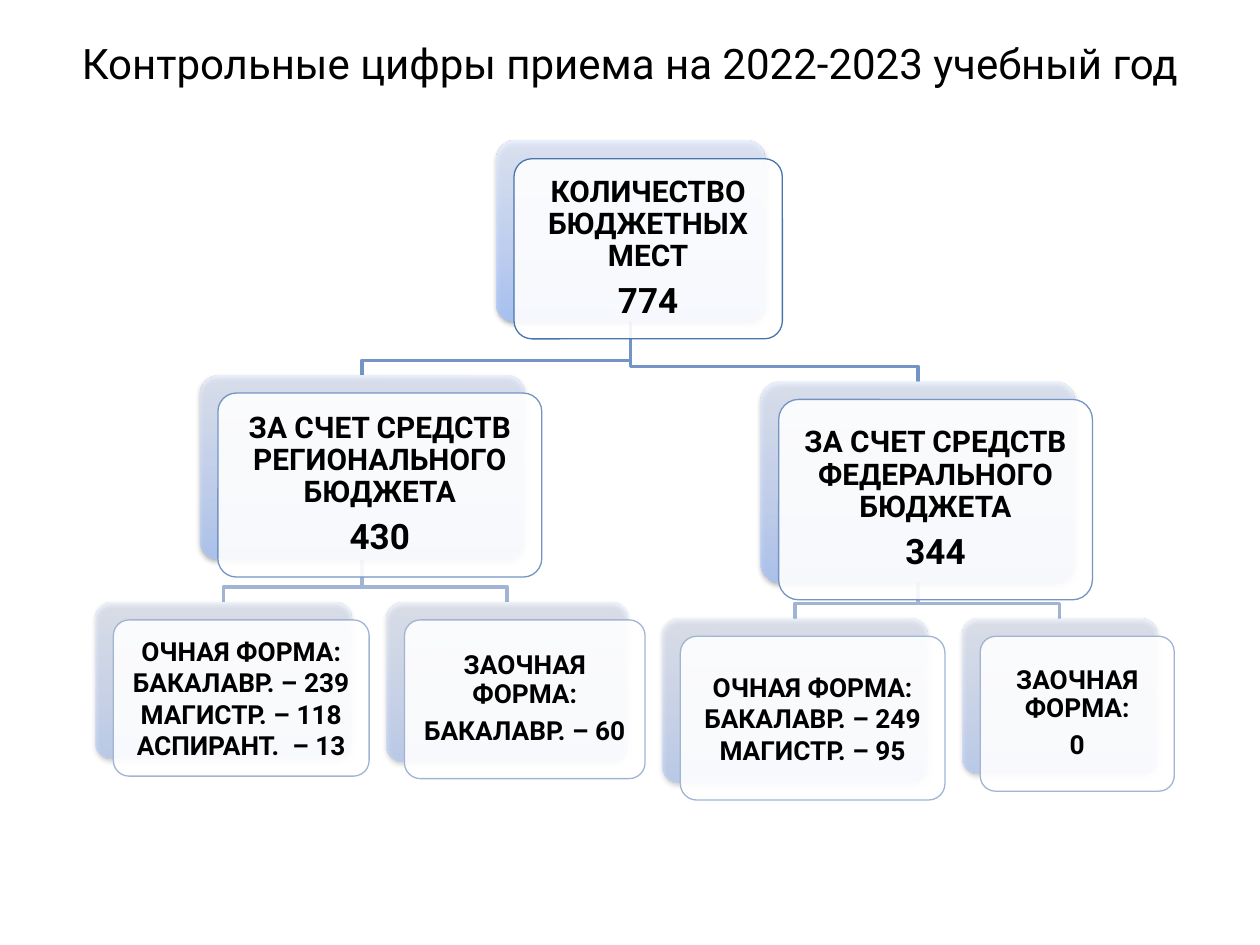
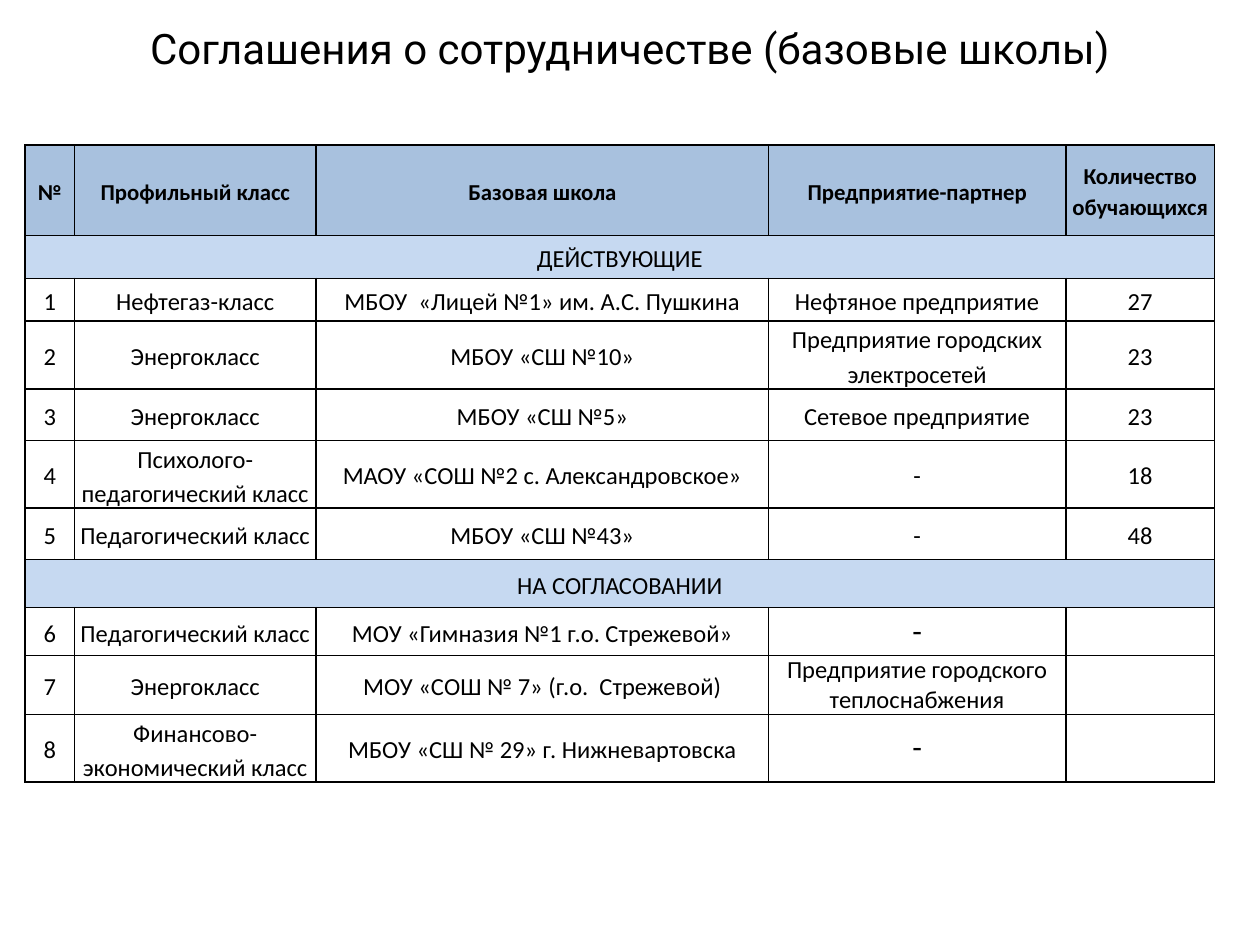
from dataclasses import dataclass, field

from lxml import etree
from pptx import Presentation
from pptx import util as u
from pptx.dml.color import RGBColor
from pptx.enum import shapes, text
from pptx.oxml import ns

Inches, Pt = u.Inches, u.Pt

# Shared style
BLACK = RGBColor(0x00, 0x00, 0x00)
WHITE = RGBColor(0xFF, 0xFF, 0xFF)
HEADER_BLUE = RGBColor(0x4F, 0x81, 0xBD)
SECTION_BLUE = RGBColor(0xC6, 0xD9, 0xF1)
PLATE_STOPS = [(0, RGBColor(0xA4, 0xC4, 0xFF)), (35, RGBColor(0xBF, 0xD4, 0xFF)),
               (100, RGBColor(0xE6, 0xEE, 0xFF))]
LEVEL_LINES = [RGBColor(0x48, 0x75, 0xAC), RGBColor(0x73, 0x94, 0xC5),
               RGBColor(0xA1, 0xB4, 0xD4)]
LEVEL_OPACITY = [80, 70, 50]
LEVEL_INSETS = [0.07, 0.07, 0.06]
HEADING_FONT, TABLE_FONT = "Roboto", "Calibri"
CARD_SHIFT = 0.14
ELBOW_DROP = 0.12


@dataclass
class Node:
    """A box of the chart: its back plate and (text, size) lines."""
    left: float
    top: float
    width: float
    height: float
    lines: list
    loose: bool = True
    children: list = field(default_factory=list)

    @property
    def center(self):
        return self.left + self.width / 2


def list_lines(*lines):
    return [(line, 15) for line in lines]


REGIONAL = Node(1.59, 2.98, 2.57, 1.46,
                [("ЗА СЧЕТ СРЕДСТВ РЕГИОНАЛЬНОГО БЮДЖЕТА", 17), ("430", 20)],
                children=[
                    Node(0.76, 4.78, 2.03, 1.24,
                         list_lines("ОЧНАЯ ФОРМА:", "БАКАЛАВР. – 239",
                                    "МАГИСТР. – 118", "АСПИРАНТ.  – 13"), loose=False),
                    Node(3.07, 4.78, 1.91, 1.26,
                         list_lines("ЗАОЧНАЯ ФОРМА:", "БАКАЛАВР. – 60"))])
FEDERAL = Node(6.04, 3.03, 2.49, 1.59,
               [("ЗА СЧЕТ СРЕДСТВ ФЕДЕРАЛЬНОГО БЮДЖЕТА", 17), ("344", 20)],
               children=[
                   Node(5.26, 4.91, 2.1, 1.3,
                        list_lines("ОЧНАЯ ФОРМА:", "БАКАЛАВР. – 249",
                                   "МАГИСТР. – 95"), loose=False),
                   Node(7.64, 4.91, 1.54, 1.23, list_lines("ЗАОЧНАЯ ФОРМА:", "0"))])
TOTAL = Node(3.94, 1.12, 2.13, 1.43,
             [("КОЛИЧЕСТВО БЮДЖЕТНЫХ МЕСТ", 17), ("774", 20)],
             children=[REGIONAL, FEDERAL])

COLUMN_WIDTHS = [0.39, 1.92, 3.59, 2.36, 1.18]
ROW_HEIGHTS = [0.72, 0.34, 0.34, 0.51, 0.41, 0.51, 0.41, 0.38, 0.38, 0.38, 0.35]
HEADERS = ["№", "Профильный класс", "Базовая школа", "Предприятие-партнер",
           "Количество обучающихся"]
PARTNER_COLUMN = 3
ACTIVE, PENDING = "ДЕЙСТВУЮЩИЕ", "НА СОГЛАСОВАНИИ"
AGREEMENTS = {
    ACTIVE: [
        ("Нефтегаз-класс", "МБОУ  «Лицей №1» им. А.С. Пушкина", "Нефтяное предприятие", "27"),
        ("Энергокласс", "МБОУ «СШ №10»", "Предприятие городских электросетей", "23"),
        ("Энергокласс", "МБОУ «СШ №5»", "Сетевое предприятие", "23"),
        ("Психолого-педагогический класс", "МАОУ «СОШ №2 с. Александровское»", "-", "18"),
        ("Педагогический класс", "МБОУ «СШ №43»", "-", "48"),
    ],
    PENDING: [
        ("Педагогический класс", "МОУ «Гимназия №1 г.о. Стрежевой»", "-", ""),
        ("Энергокласс", "МОУ «СОШ № 7» (г.о.  Стрежевой)",
         "Предприятие городского теплоснабжения", ""),
        ("Финансово-экономический класс", "МБОУ «СШ № 29» г. Нижневартовска", "-", ""),
    ],
}


# XML helpers
def add_element(parent, tag, **attributes):
    return etree.SubElement(parent, ns.qn(tag),
                            {key: str(value) for key, value in attributes.items()})


def add_color(parent, color, opacity=100):
    element = add_element(parent, "a:srgbClr", val=color)
    if opacity < 100:
        add_element(element, "a:alpha", val=opacity * 1000)


def set_opacity(properties, opacity):
    color = properties.find(ns.qn("a:solidFill")).find(ns.qn("a:srgbClr"))
    add_element(color, "a:alpha", val=opacity * 1000)


def fill_plate(shape, opacity):
    """Upward gradient and a soft shadow below."""
    properties = shape._element.spPr
    gradient = etree.Element(ns.qn("a:gradFill"), rotWithShape="1")
    stops = add_element(gradient, "a:gsLst")
    for position, color in PLATE_STOPS:
        add_color(add_element(stops, "a:gs", pos=position * 1000), color, opacity)
    add_element(gradient, "a:lin", ang=270 * 60000, scaled=0)
    properties.find(ns.qn("a:prstGeom")).addnext(gradient)
    effects = properties.find(ns.qn("a:effectLst"))
    shadow = add_element(effects, "a:outerShdw", blurRad=Pt(3.1), dist=Pt(1.6),
                         dir=90 * 60000, rotWithShape=0)
    add_color(shadow, BLACK, 38)


def set_borders(cell):
    properties = cell._tc.get_or_add_tcPr()
    for index, side in enumerate(("a:lnL", "a:lnR", "a:lnT", "a:lnB")):
        line = etree.Element(ns.qn(side), w=str(Pt(1)))
        add_color(add_element(line, "a:solidFill"), BLACK)
        properties.insert(index, line)


# Elements
def add_run(paragraph, content, size, font_name, bold=False):
    paragraph.alignment = text.PP_ALIGN.CENTER
    run = paragraph.add_run()
    run.text = content
    run.font.name = font_name
    run.font.size = Pt(size)
    run.font.bold = bold
    run.font.color.rgb = BLACK


def add_title(slide, content, left, width, height):
    box = slide.shapes.add_textbox(Inches(left), 0, Inches(width), Inches(height))
    frame = box.text_frame
    frame.word_wrap = True
    frame.vertical_anchor = text.MSO_ANCHOR.MIDDLE
    add_run(frame.paragraphs[0], content, 24, HEADING_FONT)


def add_rounded(slide, node, shift):
    shape = slide.shapes.add_shape(
        shapes.MSO_SHAPE.ROUNDED_RECTANGLE, Inches(node.left + shift),
        Inches(node.top + shift), Inches(node.width), Inches(node.height))
    shape.adjustments[0] = 0.1
    shape.shadow.inherit = False
    return shape


def add_node(slide, node, level):
    plate = add_rounded(slide, node, 0)
    plate.line.fill.background()
    fill_plate(plate, LEVEL_OPACITY[level])

    card = add_rounded(slide, node, CARD_SHIFT)
    card.fill.solid()
    card.fill.fore_color.rgb = WHITE
    set_opacity(card._element.spPr, 90)
    card.line.color.rgb = LEVEL_LINES[level]
    card.line.width = Pt(0.75)

    frame = card.text_frame
    frame.word_wrap = True
    frame.vertical_anchor = text.MSO_ANCHOR.MIDDLE
    inset = Inches(LEVEL_INSETS[level])
    frame.margin_left = frame.margin_right = inset
    frame.margin_top = frame.margin_bottom = inset
    for index, (content, size) in enumerate(node.lines):
        paragraph = frame.add_paragraph() if index else frame.paragraphs[0]
        if node.loose:
            paragraph.line_spacing = 0.9
            paragraph.space_after = Pt(round(size * 0.35))
        add_run(paragraph, content, size, HEADING_FONT, bold=True)


def add_elbow(slide, parent, child, color):
    turn = child.top - ELBOW_DROP
    points = [(parent.center, parent.top + parent.height), (parent.center, turn),
              (child.center, turn), (child.center, child.top)]
    start, *rest = [(Inches(x), Inches(y)) for x, y in points]
    builder = slide.shapes.build_freeform(*start)
    builder.add_line_segments(rest, close=False)
    elbow = builder.convert_to_shape()
    elbow.shadow.inherit = False
    elbow.fill.background()
    elbow.line.color.rgb = color
    elbow.line.width = Pt(2)


def add_elbows(slide, node, level=0):
    for child in node.children:
        add_elbows(slide, child, level + 1)
        add_elbow(slide, node, child, LEVEL_LINES[level + 1])


def add_nodes(slide, node, level=0):
    add_node(slide, node, level)
    for child in node.children:
        add_nodes(slide, child, level + 1)


def format_cell(cell, color=None):
    cell.margin_left = cell.margin_right = Inches(0.02)
    cell.margin_top = cell.margin_bottom = 0
    cell.vertical_anchor = text.MSO_ANCHOR.MIDDLE
    if color is None:
        cell.fill.background()
    else:
        cell.fill.solid()
        cell.fill.fore_color.rgb = color
    set_borders(cell)


def write_cell(cell, content, size=14, bold=False, spacing=1.15):
    if content:
        paragraph = cell.text_frame.paragraphs[0]
        paragraph.line_spacing = spacing
        add_run(paragraph, content, size, TABLE_FONT, bold)


def add_agreements(slide):
    table = slide.shapes.add_table(
        len(ROW_HEIGHTS), len(COLUMN_WIDTHS), Inches(0.2), Inches(1.15),
        Inches(sum(COLUMN_WIDTHS)), Inches(sum(ROW_HEIGHTS))).table
    table.first_row = table.horz_banding = False
    for column, width in zip(table.columns, COLUMN_WIDTHS):
        column.width = Inches(width)
    for row, height in zip(table.rows, ROW_HEIGHTS):
        row.height = Inches(height)

    rows = iter(table.rows)
    for cell, header in zip(next(rows).cells, HEADERS):
        format_cell(cell, HEADER_BLUE)
        set_opacity(cell._tc.tcPr, 49)
        write_cell(cell, header, 13, bold=True)

    number = 0
    for section, agreements in AGREEMENTS.items():
        band = list(next(rows).cells)
        for cell in band:
            format_cell(cell, SECTION_BLUE)
        band[0].merge(band[-1])
        write_cell(band[0], section)
        for agreement in agreements:
            number += 1
            for index, (cell, content) in enumerate(
                    zip(next(rows).cells, (str(number), *agreement))):
                format_cell(cell)
                if section == PENDING and index == PARTNER_COLUMN:
                    write_cell(cell, content, 18 if content == "-" else 14, spacing=1.0)
                else:
                    write_cell(cell, content)


def main():
    presentation = Presentation()
    presentation.slide_width, presentation.slide_height = Inches(10), Inches(7.5)
    blank = presentation.slide_layouts[6]

    # Admission figures
    slide = presentation.slides.add_slide(blank)
    add_title(slide, "Контрольные цифры приема на 2022-2023 учебный год", 0, 10, 0.99)
    add_elbows(slide, TOTAL)
    add_nodes(slide, TOTAL)

    # School agreements
    slide = presentation.slides.add_slide(blank)
    add_title(slide, "Соглашения о сотрудничестве (базовые школы)", 0.12, 9.76, 0.76)
    add_agreements(slide)

    presentation.save("out.pptx")


if __name__ == "__main__":
    main()
